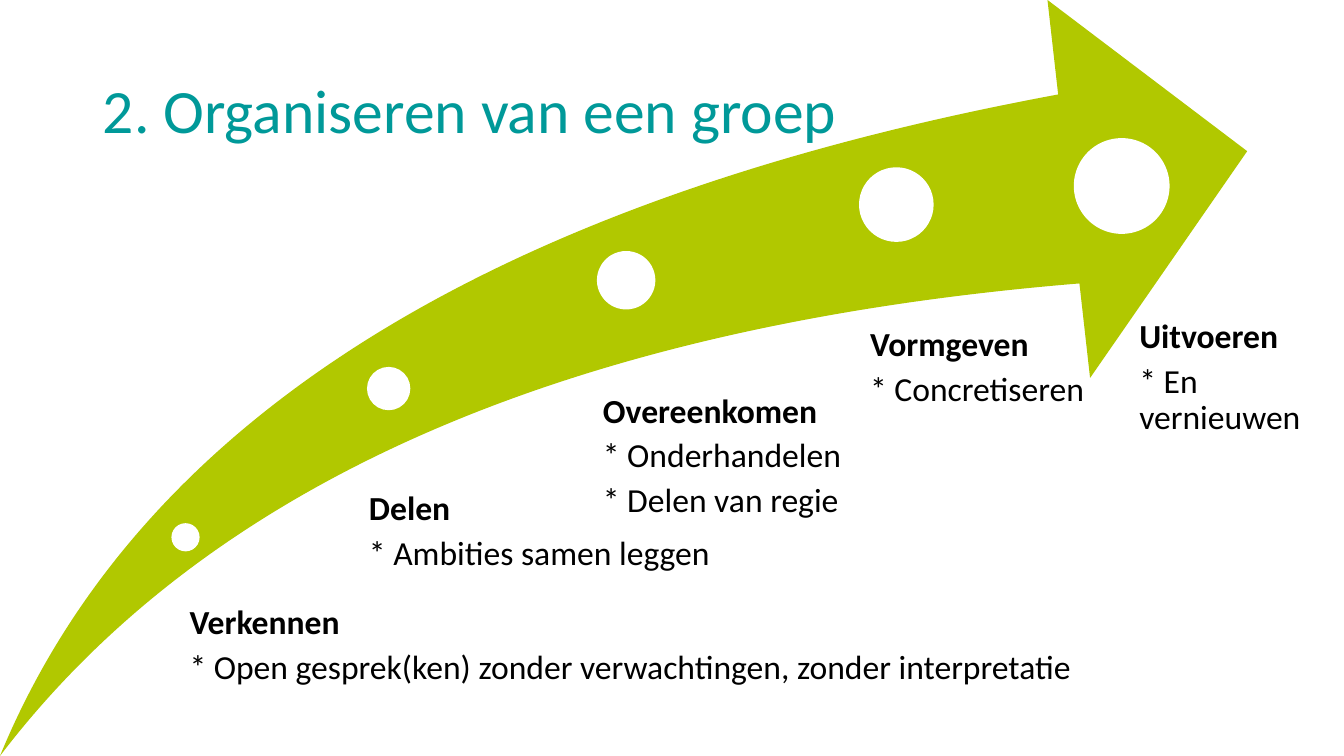
from pptx import Presentation
from pptx.dml.color import RGBColor
from pptx.enum.shapes import MSO_SHAPE as Preset
from pptx.enum.text import MSO_ANCHOR as Anchor
from pptx.util import Inches, Pt

FONT = "Calibri"
TEAL, LIME, WHITE, BLACK = "009999", "B1C800", "FFFFFF", "000000"

# Per step: dot (left, top, size), text box (left, top, width, height), left inset, lines
STEPS = [
    ((1.7, 5.19, 0.28), (1.73, 6.01, 10.58, 1.22), 0.15,
     ["Verkennen", "* Open gesprek(ken) zonder verwachtingen, zonder interpretatie"]),
    ((3.64, 3.64, 0.43), (3.43, 4.88, 5.47, 1.51), 0.23,
     ["Delen", "* Ambities samen leggen"]),
    ((5.92, 2.49, 0.58), (5.67, 3.91, 3.58, 1.74), 0.31,
     ["Overeenkomen", "* Onderhandelen", "* Delen van regie"]),
    ((8.52, 1.66, 0.74), (8.24, 3.25, 3.53, 1.58), 0.39,
     ["Vormgeven", "* Concretiseren"]),
    ((10.65, 1.37, 0.95), (10.8, 3.17, 2.4, 2.15), 0.5,
     ["Uitvoeren", "* En vernieuwen"]),
]


def color(hex_string):
    return RGBColor.from_string(hex_string)


def style_paragraph(para, size, hex_string, bold=False):
    para.line_spacing = 0.9
    para.font.name = FONT
    para.font.size = Pt(size)
    para.font.bold = bold
    para.font.color.rgb = color(hex_string)


def set_title(page, text):
    title = page.shapes.title
    title.left, title.top = Inches(0.92), Inches(0.4)
    title.width, title.height = Inches(11.5), Inches(1.45)
    frame = title.text_frame
    frame.text = text
    frame.word_wrap = True
    frame.vertical_anchor = Anchor.MIDDLE
    para = frame.paragraphs[0]
    para.alignment = 1  # left
    style_paragraph(para, 44, TEAL)


def add_plain_shape(page, preset, left, top, width, height, fill):
    shape = page.shapes.add_shape(
        preset, Inches(left), Inches(top), Inches(width), Inches(height))
    shape.shadow.inherit = False
    shape.fill.solid()
    shape.fill.fore_color.rgb = color(fill)
    shape.line.fill.background()
    return shape


def add_step_text(page, place, inset, lines):
    box = page.shapes.add_textbox(*map(Inches, place))
    frame = box.text_frame
    frame.word_wrap = True
    frame.margin_left = Inches(inset)
    frame.margin_top = frame.margin_right = frame.margin_bottom = 0
    for index, line in enumerate(lines):
        para = frame.add_paragraph() if index else frame.paragraphs[0]
        para.text = line
        para.space_after = Pt(6)
        style_paragraph(para, 24, BLACK, bold=index == 0)


def main():
    deck = Presentation()
    deck.slide_width, deck.slide_height = Inches(13.33), Inches(7.5)
    page = deck.slides.add_slide(deck.slide_layouts[5])
    set_title(page, "2. Organiseren van een groep")

    # Rising arrow
    arrow = add_plain_shape(page, Preset.SWOOSH_ARROW, 0, 0, 12.37, 7.5, LIME)
    arrow.adjustments[0] = arrow.adjustments[1] = 0.25

    # Steps along the arrow
    for (left, top, size), place, inset, lines in STEPS:
        add_plain_shape(page, Preset.OVAL, left, top, size, size, WHITE)
        add_step_text(page, place, inset, lines)

    deck.save("out.pptx")


if __name__ == "__main__":
    main()
